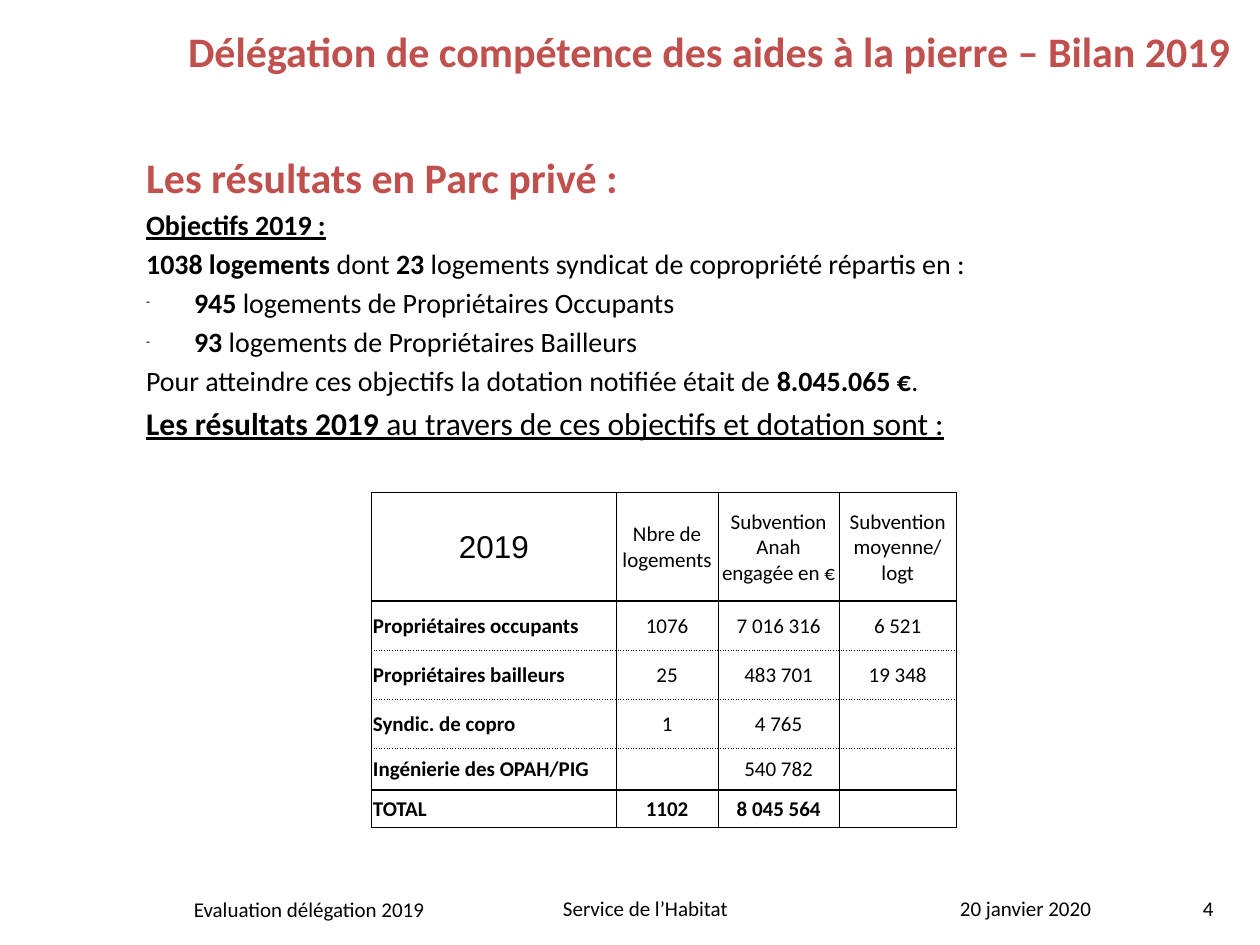
from typing import NamedTuple

from lxml.etree import SubElement
from pptx import Presentation
from pptx.dml.color import RGBColor
from pptx.enum.text import MSO_ANCHOR, MSO_AUTO_SIZE, PP_ALIGN
from pptx.oxml import parse_xml
from pptx.oxml.ns import nsdecls, qn
from pptx.util import Inches, Pt

BLACK = RGBColor(0x00, 0x00, 0x00)
RED = RGBColor(0xC0, 0x50, 0x4D)
FONT = "Calibri"


class TextRun(NamedTuple):
    text: str
    bold: bool = False
    underline: bool = False


class BodyLine(NamedTuple):
    runs: list[TextRun]
    size: int = 16
    color: RGBColor = BLACK
    alignment: PP_ALIGN = PP_ALIGN.JUSTIFY
    dashed: bool = False


class Footer(NamedTuple):
    text: str
    left: float
    top: float
    width: float
    alignment: PP_ALIGN = PP_ALIGN.LEFT


class Border(NamedTuple):
    width: float
    dash: str = "solid"


TITLE = "Délégation de compétence des aides à la pierre – Bilan 2019"

BODY_LINES = [
    BodyLine([TextRun("Les résultats en Parc privé :", True)], 24, RED, PP_ALIGN.LEFT),
    BodyLine([TextRun("Objectifs 2019 :", True, True)]),
    BodyLine([TextRun("1038 logements ", True), TextRun("dont "), TextRun("23 ", True),
              TextRun("logements syndicat de copropriété répartis en :")]),
    BodyLine([TextRun("945 ", True), TextRun("logements de Propriétaires Occupants")],
             dashed=True),
    BodyLine([TextRun("93 ", True), TextRun("logements de Propriétaires Bailleurs")],
             dashed=True),
    BodyLine([TextRun("Pour atteindre ces objectifs la dotation notifiée était de "),
              TextRun("8.045.065 €", True), TextRun(".")]),
    BodyLine([TextRun("Les résultats 2019 ", True, True),
              TextRun("au travers de ces objectifs et dotation sont :", underline=True)], 18),
]

FOOTERS = [
    Footer("Evaluation délégation 2019", 1.44, 7.07, 2.6),
    Footer("Service de l’Habitat", 4.37, 7.06, 2.84),
    Footer("20 janvier 2020", 7.52, 7.06, 1.58),
    Footer("4", 8.97, 7.06, 0.76, PP_ALIGN.RIGHT),
]

COLUMN_WIDTHS = [1.94, 0.81, 0.96, 0.93]
ROW_HEIGHTS = [0.86, 0.39, 0.39, 0.39, 0.33, 0.3]
TABLE_ROWS = [
    ["2019", "Nbre de logements", "Subvention Anah engagée en €",
     "Subvention moyenne/\vlogt"],
    ["Propriétaires occupants", "1076", "7 016 316", "6 521"],
    ["Propriétaires bailleurs", "25", "483 701", "19 348"],
    ["Syndic. de copro", "1", "4 765", ""],
    ["Ingénierie des OPAH/PIG", "", "540 782", ""],
    ["TOTAL", "1102", "8 045 564", ""],
]
LAST_ROW = len(ROW_HEIGHTS) - 1
SOLID, THIN, DOTTED = Border(1), Border(0.5), Border(0.5, "sysDot")
ROW_BORDERS = [SOLID, SOLID, DOTTED, DOTTED, DOTTED, SOLID, SOLID]
COLUMN_BORDERS = [SOLID, THIN, THIN, THIN, SOLID]


def format_font(font, size: int, color: RGBColor = BLACK, bold: bool = False,
                name: str = FONT) -> None:
    font.name, font.size, font.bold = name, Pt(size), bold
    font.color.rgb = color


def place(shape, left: float, top: float, width: float, height: float) -> None:
    shape.left, shape.top = Inches(left), Inches(top)
    shape.width, shape.height = Inches(width), Inches(height)


def fill_title(title) -> None:
    place(title, 1.38, 0.13, 8.5, 0.55)
    text_frame = title.text_frame
    text_frame.text = TITLE
    text_frame.auto_size = MSO_AUTO_SIZE.NONE
    text_frame.vertical_anchor = MSO_ANCHOR.MIDDLE
    text_frame.margin_left = text_frame.margin_right = Inches(0.05)
    paragraph = text_frame.paragraphs[0]
    paragraph.alignment = PP_ALIGN.CENTER
    format_font(paragraph.runs[0].font, 24, RED, bold=True)


def set_bullet(paragraph, dashed: bool) -> None:
    properties = paragraph._p.get_or_add_pPr()
    indent = Inches(0.38) if dashed else 0
    properties.set("marL", str(indent))
    properties.set("indent", str(-indent))
    if dashed:
        SubElement(properties, qn("a:buSzPct")).set("val", "48000")
        SubElement(properties, qn("a:buFont")).set("typeface", FONT)
        SubElement(properties, qn("a:buChar")).set("char", "-")
    else:
        SubElement(properties, qn("a:buNone"))


def fill_body(body) -> None:
    place(body, 1.06, 1.15, 8.66, 5.67)
    text_frame = body.text_frame
    text_frame.auto_size = MSO_AUTO_SIZE.NONE
    for index, line in enumerate(BODY_LINES):
        paragraph = text_frame.add_paragraph() if index else text_frame.paragraphs[0]
        set_bullet(paragraph, line.dashed)
        paragraph.alignment = line.alignment
        if index == 0:
            paragraph.space_before = Pt(0)
        for text_run in line.runs:
            run = paragraph.add_run()
            run.text = text_run.text
            format_font(run.font, line.size, line.color, text_run.bold)
            run.font.underline = text_run.underline


def set_borders(cell, row: int, column: int) -> None:
    borders = {"lnL": COLUMN_BORDERS[column], "lnR": COLUMN_BORDERS[column + 1],
               "lnT": ROW_BORDERS[row], "lnB": ROW_BORDERS[row + 1]}
    properties = cell._tc.get_or_add_tcPr()
    for index, (tag, border) in enumerate(borders.items()):
        properties.insert(index, parse_xml(
            f'<a:{tag} {nsdecls("a")} w="{Pt(border.width)}">'
            f'<a:solidFill><a:srgbClr val="{BLACK}"/></a:solidFill>'
            f'<a:prstDash val="{border.dash}"/></a:{tag}>'))


def fill_cell(cell, text: str, row: int, column: int) -> None:
    cell.fill.background()
    cell.vertical_anchor = MSO_ANCHOR.MIDDLE
    cell.margin_left = cell.margin_right = cell.margin_top = Inches(0.01)
    cell.margin_bottom = 0
    cell.text_frame.text = text
    paragraph = cell.text_frame.paragraphs[0]
    is_corner = row == 0 and column == 0
    is_label = column == 0 and row > 0
    paragraph.alignment = PP_ALIGN.LEFT if is_label else PP_ALIGN.CENTER
    for run in paragraph.runs:
        format_font(run.font, 18 if is_corner else 12, bold=is_label or row == LAST_ROW,
                    name="Arial" if is_corner else FONT)
    if not text:
        SubElement(paragraph._p, qn("a:endParaRPr")).set("sz", "1200")
    set_borders(cell, row, column)


def add_results_table(slide) -> None:
    table = slide.shapes.add_table(
        len(ROW_HEIGHTS), len(COLUMN_WIDTHS), Inches(2.95), Inches(3.91),
        Inches(sum(COLUMN_WIDTHS)), Inches(sum(ROW_HEIGHTS))).table
    table.first_row = table.horz_banding = False
    for column, width in zip(table.columns, COLUMN_WIDTHS):
        column.width = Inches(width)
    for row, height in zip(table.rows, ROW_HEIGHTS):
        row.height = Inches(height)
    for row, texts in enumerate(TABLE_ROWS):
        for column, text in enumerate(texts):
            fill_cell(table.cell(row, column), text, row, column)


def add_footer(slide, footer: Footer) -> None:
    text_box = slide.shapes.add_textbox(Inches(footer.left), Inches(footer.top),
                                        Inches(footer.width), Inches(0.3))
    text_frame = text_box.text_frame
    text_frame.word_wrap = True
    text_frame.text = footer.text
    paragraph = text_frame.paragraphs[0]
    paragraph.alignment = footer.alignment
    format_font(paragraph.runs[0].font, 12)


def main() -> None:
    presentation = Presentation()
    presentation.slide_width, presentation.slide_height = Inches(10), Inches(7.5)
    slide = presentation.slides.add_slide(presentation.slide_layouts[1])
    fill_title(slide.shapes.title)
    fill_body(slide.placeholders[1])
    add_results_table(slide)
    for footer in FOOTERS:
        add_footer(slide, footer)
    presentation.save("out.pptx")


if __name__ == "__main__":
    main()
